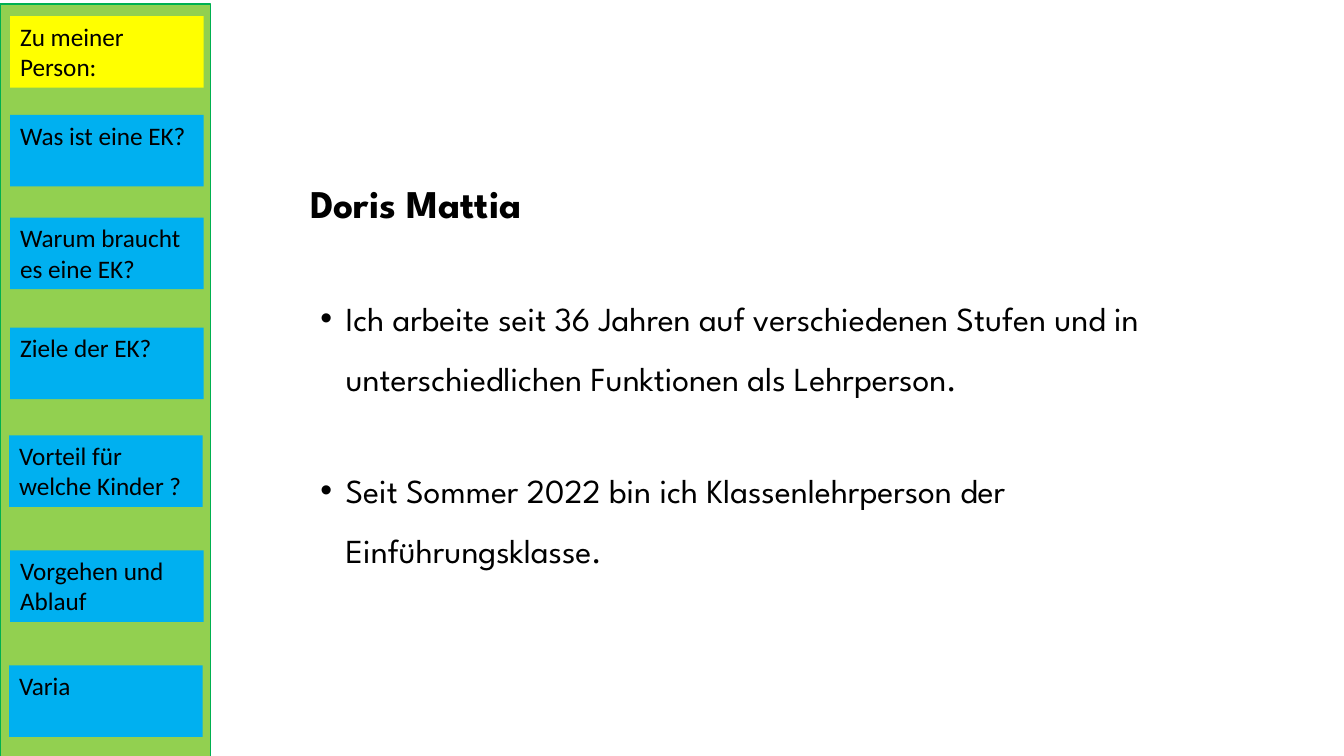
import pptx
import pptx.util
import pptx.dml.color
import pptx.enum.shapes
import pptx.enum.text
import pptx.oxml.ns
import lxml.etree

Inches = pptx.util.Inches
Pt = pptx.util.Pt

COLORS = {
    "panel": "92D050",
    "panel_line": "00B050",
    "active": "FFFF00",
    "topic": "00B0F0",
    "text": "000000",
}

TOPICS = [
    ("Zu meiner Person:", 0.1, 0.16),
    ("Was ist eine EK?", 0.1, 1.14),
    ("Warum braucht es eine EK?", 0.1, 2.16),
    ("Ziele der EK?", 0.1, 3.25),
    ("Vorteil für welche Kinder ?", 0.09, 4.32),
    ("Vorgehen und Ablauf", 0.1, 5.46),
    ("Varia", 0.09, 6.6),
]

STATEMENTS = [
    "Ich arbeite seit 36 Jahren auf verschiedenen Stufen und in "
    "unterschiedlichen Funktionen als Lehrperson.",
    "Seit Sommer 2022 bin ich Klassenlehrperson der Einführungsklasse.",
]


class SlideBuilder:
    body_font = "League Spartan"
    topic_font = "Calibri"

    def __init__(self, slide):
        self.slide = slide

    def color(self, name):
        return pptx.dml.color.RGBColor.from_string(COLORS[name])

    def rectangle(self, left, top, width, height, fill, line=None):
        shape = self.slide.shapes.add_shape(
            pptx.enum.shapes.MSO_SHAPE.RECTANGLE,
            Inches(left), Inches(top), Inches(width), Inches(height))
        shape.shadow.inherit = False
        shape.fill.solid()
        shape.fill.fore_color.rgb = self.color(fill)
        if line:
            shape.line.color.rgb = self.color(line)
            shape.line.width = Pt(1)
        else:
            shape.line.fill.background()
        return shape

    def run(self, paragraph, text, font, size, bold=False):
        run = paragraph.add_run()
        run.text = text
        run.font.name = font
        run.font.size = Pt(size)
        run.font.bold = bold
        run.font.color.rgb = self.color("text")

    def topic(self, text, left, top, fill):
        shape = self.rectangle(left, top, 1.92, 0.71, fill)
        frame = shape.text_frame
        frame.word_wrap = True
        frame.vertical_anchor = pptx.enum.text.MSO_ANCHOR.TOP
        paragraph = frame.paragraphs[0]
        paragraph.alignment = pptx.enum.text.PP_ALIGN.LEFT
        self.run(paragraph, text, self.topic_font, 18)

    def indent(self, paragraph, margin, first_line, bullet=None):
        properties = paragraph._p.get_or_add_pPr()
        properties.set("marL", str(Inches(margin)))
        properties.set("indent", str(Inches(first_line)))
        if bullet:
            qualified = pptx.oxml.ns.qn
            font = lxml.etree.SubElement(properties, qualified("a:buFont"))
            font.set("typeface", "Arial")
            character = lxml.etree.SubElement(properties, qualified("a:buChar"))
            character.set("char", bullet)

    def body(self, left, top, width, height, heading, statements):
        box = self.slide.shapes.add_textbox(
            Inches(left), Inches(top), Inches(width), Inches(height))
        frame = box.text_frame
        frame.word_wrap = True
        paragraph = frame.paragraphs[0]
        self.indent(paragraph, 0.4, 0)
        paragraph.line_spacing = 0.9
        self.run(paragraph, heading, self.body_font, 28, bold=True)
        for statement in statements:
            paragraph = frame.add_paragraph()
            self.indent(paragraph, 0.75, -0.25, "•")
            paragraph.line_spacing = 1.5
            paragraph.space_before = Pt(36.4)
            self.run(paragraph, statement, self.body_font, 24)


def main():
    presentation = pptx.Presentation()
    presentation.slide_width = Inches(13.33)
    presentation.slide_height = Inches(7.5)
    slide = presentation.slides.add_slide(presentation.slide_layouts[6])
    builder = SlideBuilder(slide)
    builder.body(2.58, 1.78, 9.84, 4.5, "Doris Mattia", STATEMENTS)
    builder.rectangle(0, 0.04, 2.09, 7.5, "panel", "panel_line")
    for index, (text, left, top) in enumerate(TOPICS):
        builder.topic(text, left, top, "topic" if index else "active")
    presentation.save("out.pptx")


if __name__ == "__main__":
    main()
